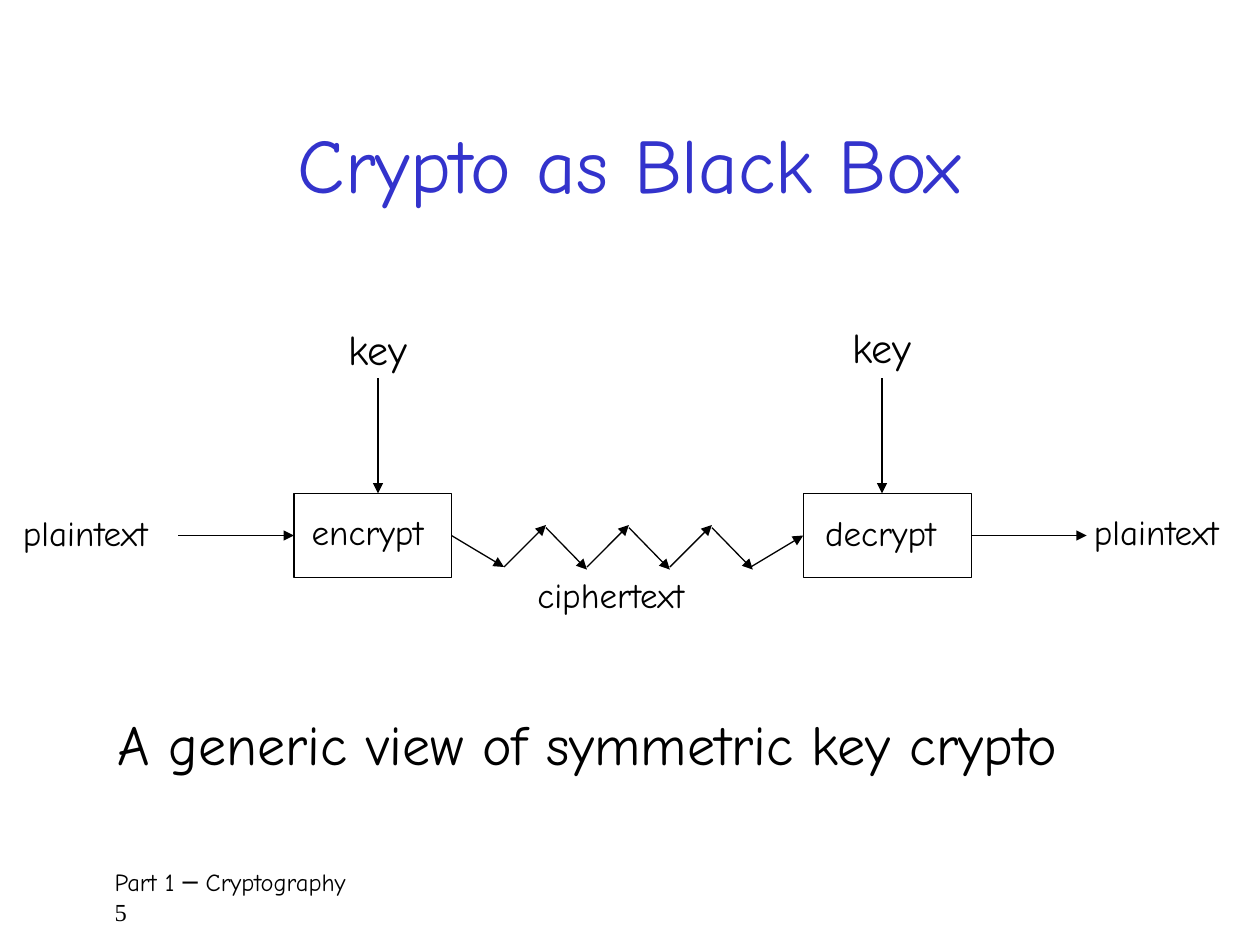
from dataclasses import dataclass

from lxml.etree import SubElement
from pptx import Presentation
from pptx.dml.color import RGBColor
from pptx.enum.shapes import MSO_CONNECTOR as Link, MSO_SHAPE as Shape
from pptx.enum.text import MSO_ANCHOR as Anchor, MSO_AUTO_SIZE as AutoSize, PP_ALIGN as Align
from pptx.oxml.ns import qn
from pptx.util import Inches, Pt

COLUMNS, ROWS = 120, 90
TOP, LEFT, RIGHT = 0, 1, 3


@dataclass(frozen=True)
class Theme:
    """Colours, fonts and type sizes of the slide."""
    ink: RGBColor = RGBColor(0x00, 0x00, 0x00)
    accent: RGBColor = RGBColor(0x33, 0x33, 0xCC)
    font: str = "Comic Neue"
    number_font: str = "Times New Roman"
    title: int = 44
    statement: int = 32
    key: int = 24
    label: int = 20
    footer: int = 14
    line: float = 0.75


THEME = Theme()


def grid(*cells):
    """Turn grid cells, twelve to the inch, into lengths."""
    return [Inches(cell * 10 / COLUMNS) for cell in cells]


def write(para, text, size=THEME.label, font=THEME.font, color=THEME.ink):
    """Add a formatted span to a paragraph."""
    span = para.add_run()
    span.text = text
    span.font.size = Pt(size)
    span.font.name = font
    span.font.color.rgb = color


def add_title(page, text):
    """Fill the title placeholder."""
    title = page.shapes.title
    title.left, title.top, title.width, title.height = grid(9, 8, 102, 15)
    title.text_frame.vertical_anchor = Anchor.MIDDLE
    para = title.text_frame.paragraphs[0]
    para.alignment = Align.CENTER
    write(para, text, size=THEME.title, color=THEME.accent)


def add_label(page, text, column, row, width, height=5.9, **style):
    """Add a text box that grows with its text."""
    box = page.shapes.add_textbox(*grid(column, row, width, height))
    box.text_frame.word_wrap = True
    box.text_frame.auto_size = AutoSize.SHAPE_TO_FIT_TEXT
    write(box.text_frame.paragraphs[0], text, **style)


def add_footer(page, text, number):
    """Add the footer with the page number on its second line."""
    box = page.shapes.add_textbox(*grid(9, 82, 103, 6))
    box.text_frame.word_wrap = True
    box.text_frame.margin_left = Inches(0.16)
    para = box.text_frame.paragraphs[0]
    write(para, text, size=THEME.footer)
    para.add_line_break()
    write(para, number, size=THEME.footer, font=THEME.number_font)


def add_stage(page, column, width):
    """Add an outlined box for one stage of the process."""
    box = page.shapes.add_shape(Shape.RECTANGLE, *grid(column, 47, width, 8))
    box.shadow.inherit = False
    box.fill.background()
    box.line.color.rgb = THEME.ink
    box.line.width = Pt(THEME.line)
    return box


def add_arrow(page, start, end, source=None, target=None):
    """Draw an arrow, joined to the stage sides that are given."""
    arrow = page.shapes.add_connector(Link.STRAIGHT, *grid(*start, *end))
    if source:
        arrow.begin_connect(*source)
    if target:
        arrow.end_connect(*target)
    arrow.line.color.rgb = THEME.ink
    arrow.line.width = Pt(THEME.line)
    SubElement(arrow.line._get_or_add_ln(), qn("a:tailEnd"), type="triangle")
    SubElement(arrow._element.spPr, qn("a:effectLst"))


def add_zigzag(page, source, target):
    """Draw the ciphertext path between two stages."""
    add_arrow(page, (43, 51), (48, 54), source=(source, RIGHT))
    for step in range(3):
        column = 48 + 7.9 * step
        add_arrow(page, (column, 54), (column + 4, 50))
        add_arrow(page, (column + 4, 50.25), (column + 7.9, 54.25))
    add_arrow(page, (71.5, 54), (76.5, 51), target=(target, LEFT))


def main():
    """Build the slide and save it."""
    deck = Presentation()
    deck.slide_width, deck.slide_height = grid(COLUMNS, ROWS)
    page = deck.slides.add_slide(deck.slide_layouts[5])

    add_title(page, "Crypto as Black Box")
    encrypt = add_stage(page, 28, 15)
    decrypt = add_stage(page, 76.5, 16)

    for text, column, row, width in (
        ("plaintext", 1, 48.1, 17),
        ("encrypt", 28.5, 48, 14.4),
        ("ciphertext", 50, 54, 20),
        ("decrypt", 77.4, 48.1, 14.6),
        ("plaintext", 103, 48, 17),
    ):
        add_label(page, text, column, row, width)
    for column, row in ((32, 30.25), (80, 30)):
        add_label(page, "key", column, row, 11, 6.8, size=THEME.key)
        add_arrow(page, (column + 4, 36), (column + 4, 47))

    add_arrow(page, (17, 51), (28, 51), target=(encrypt, LEFT))
    add_zigzag(page, encrypt, decrypt)
    add_arrow(page, (92.5, 51), (103.5, 51), source=(decrypt, RIGHT))

    add_label(page, "A generic view of symmetric key crypto", 10, 67, 102.5, 7.7,
              size=THEME.statement)
    add_footer(page, "Part 1 ─ Cryptography", "5")
    deck.save("out.pptx")


if __name__ == "__main__":
    main()
